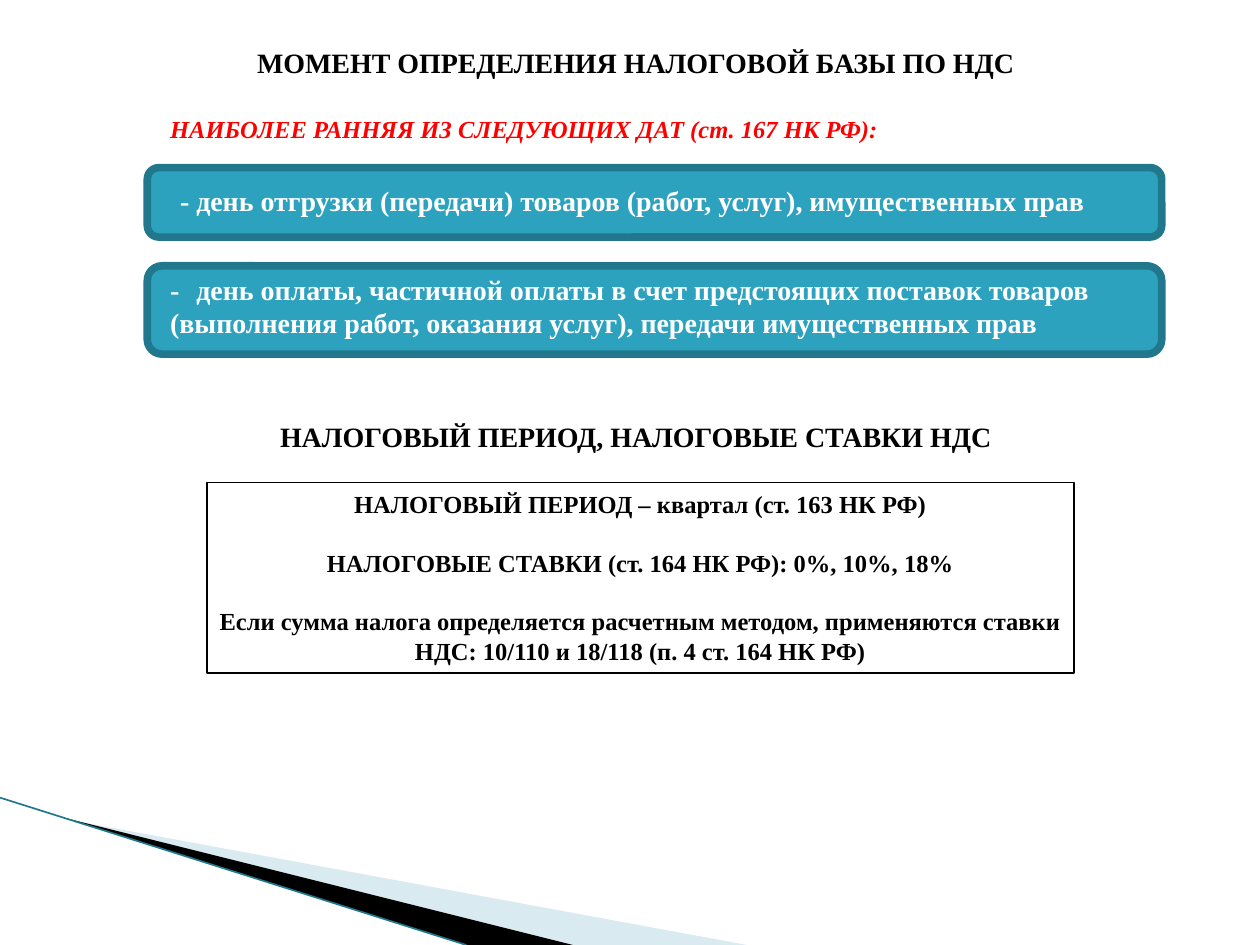
from lxml.etree import SubElement
from pptx import Presentation
from pptx.dml.color import RGBColor
from pptx.enum.shapes import MSO_CONNECTOR, MSO_SHAPE
from pptx.enum.text import PP_ALIGN
from pptx.oxml.ns import qn
from pptx.util import Cm, Pt

COLORS = {
    "black": "000000",
    "white": "FFFFFF",
    "red": "FF0000",
    "teal": "2DA2BF",
    "dark_teal": "21788D",
    "pale_blue": "A0CBDC",
}
FONT = "Times New Roman"


def rgb(name):
    return RGBColor.from_string(COLORS[name])


def write_text(shape, *lines, size=16, color="black", italic=False,
               align=PP_ALIGN.LEFT, gap=0, tab=None):
    """Write one bold paragraph per line, with a gap between paragraphs."""
    frame = shape.text_frame
    frame.word_wrap = True
    for index, line in enumerate(lines):
        paragraph = frame.paragraphs[0] if index == 0 else frame.add_paragraph()
        paragraph.alignment = align
        if index and gap:
            paragraph.space_before = Pt(gap)
        if tab:
            tab_list = SubElement(paragraph._p.get_or_add_pPr(), qn("a:tabLst"))
            SubElement(tab_list, qn("a:tab"), pos=str(Cm(tab)), algn="l")
        run = paragraph.add_run()
        run.text = line
        run.font.name = FONT
        run.font.size = Pt(size)
        run.font.bold = True
        run.font.italic = italic
        run.font.color.rgb = rgb(color)


class SlideBuilder:
    def __init__(self, slide):
        self.slide = slide
        self.shapes = slide.shapes

    def text(self, left, top, width, height, *lines, **style):
        box = self.shapes.add_textbox(Cm(left), Cm(top), Cm(width), Cm(height))
        write_text(box, *lines, **style)
        return box

    def heading(self, top, line):
        return self.text(1.32, top, 23, 0.94, line, align=PP_ALIGN.CENTER)

    def framed_text(self, left, top, width, height, *lines, **style):
        box = self.text(left, top, width, height, *lines, **style)
        box.line.color.rgb = rgb("black")
        box.line.width = Pt(1)

    def panel(self, top, height):
        shape = self.shapes.add_shape(MSO_SHAPE.ROUNDED_RECTANGLE, Cm(2.97),
                                      Cm(top), Cm(20.45), Cm(height))
        shape.shadow.inherit = False
        shape.fill.solid()
        shape.fill.fore_color.rgb = rgb("teal")
        shape.line.color.rgb = rgb("dark_teal")
        shape.line.width = Pt(4.33)

    def wedge(self, points, color, opacity=None):
        start, *rest = [(Cm(x), Cm(y)) for x, y in points]
        builder = self.shapes.build_freeform(*start)
        builder.add_line_segments(rest, close=True)
        shape = builder.convert_to_shape()
        shape.shadow.inherit = False
        shape.fill.solid()
        shape.fill.fore_color.rgb = rgb(color)
        shape.line.fill.background()
        if opacity:
            fill_color = shape._element.spPr.find(
                f"{qn('a:solidFill')}/{qn('a:srgbClr')}")
            SubElement(fill_color, qn("a:alpha"), val=str(opacity * 1000))

    def line(self, x1, y1, x2, y2, color, width):
        connector = self.shapes.add_connector(
            MSO_CONNECTOR.STRAIGHT, Cm(x1), Cm(y1), Cm(x2), Cm(y2))
        connector.line.color.rgb = rgb(color)
        connector.line.width = Pt(width)
        SubElement(connector._element.spPr, qn("a:effectLst"))


def main():
    presentation = Presentation()
    presentation.slide_width = Cm(25.4)
    presentation.slide_height = Cm(19.05)
    slide = presentation.slides.add_slide(presentation.slide_layouts[6])
    builder = SlideBuilder(slide)

    # Corner decoration
    builder.wedge([(1.4, 16.53), (15.05, 19.05), (11.58, 19.05)],
                  "pale_blue", opacity=40)
    builder.wedge([(1.35, 16.5), (11.55, 19.05), (9.4, 19.05)], "black")
    builder.line(0, 16.08, 9.4, 19.05, "dark_teal", 0.95)

    # Tax period and rates
    builder.heading(8.33, "НАЛОГОВЫЙ ПЕРИОД, НАЛОГОВЫЕ СТАВКИ НДС")
    builder.framed_text(
        4.17, 9.73, 17.48, 3.84,
        "НАЛОГОВЫЙ ПЕРИОД – квартал (ст. 163 НК РФ)",
        "НАЛОГОВЫЕ СТАВКИ (ст. 164 НК РФ): 0%, 10%, 18%",
        "Если сумма налога определяется расчетным методом, применяются "
        "ставки НДС: 10/110 и 18/118 (п. 4 ст. 164 НК РФ)",
        size=14, align=PP_ALIGN.CENTER, gap=16.8)

    # Moment of determining the tax base
    builder.heading(0.79, "МОМЕНТ ОПРЕДЕЛЕНИЯ НАЛОГОВОЙ БАЗЫ ПО НДС")
    builder.text(3.18, 2.18, 15.47, 0.86,
                 "НАИБОЛЕЕ РАННЯЯ ИЗ СЛЕДУЮЩИХ ДАТ (ст. 167 НК РФ):",
                 size=14, color="red", italic=True)

    # Date panels
    builder.panel(3.38, 1.4)
    builder.text(3.38, 3.58, 19.25, 0.94,
                 "- день отгрузки (передачи) товаров (работ, услуг), "
                 "имущественных прав", color="white")
    builder.panel(5.36, 1.78)
    builder.text(3.18, 5.36, 19.25, 1.63,
                 "-\tдень оплаты, частичной оплаты в счет предстоящих поставок "
                 "товаров (выполнения работ, оказания услуг), передачи "
                 "имущественных прав", color="white", tab=0.53)

    presentation.save("out.pptx")


if __name__ == "__main__":
    main()
